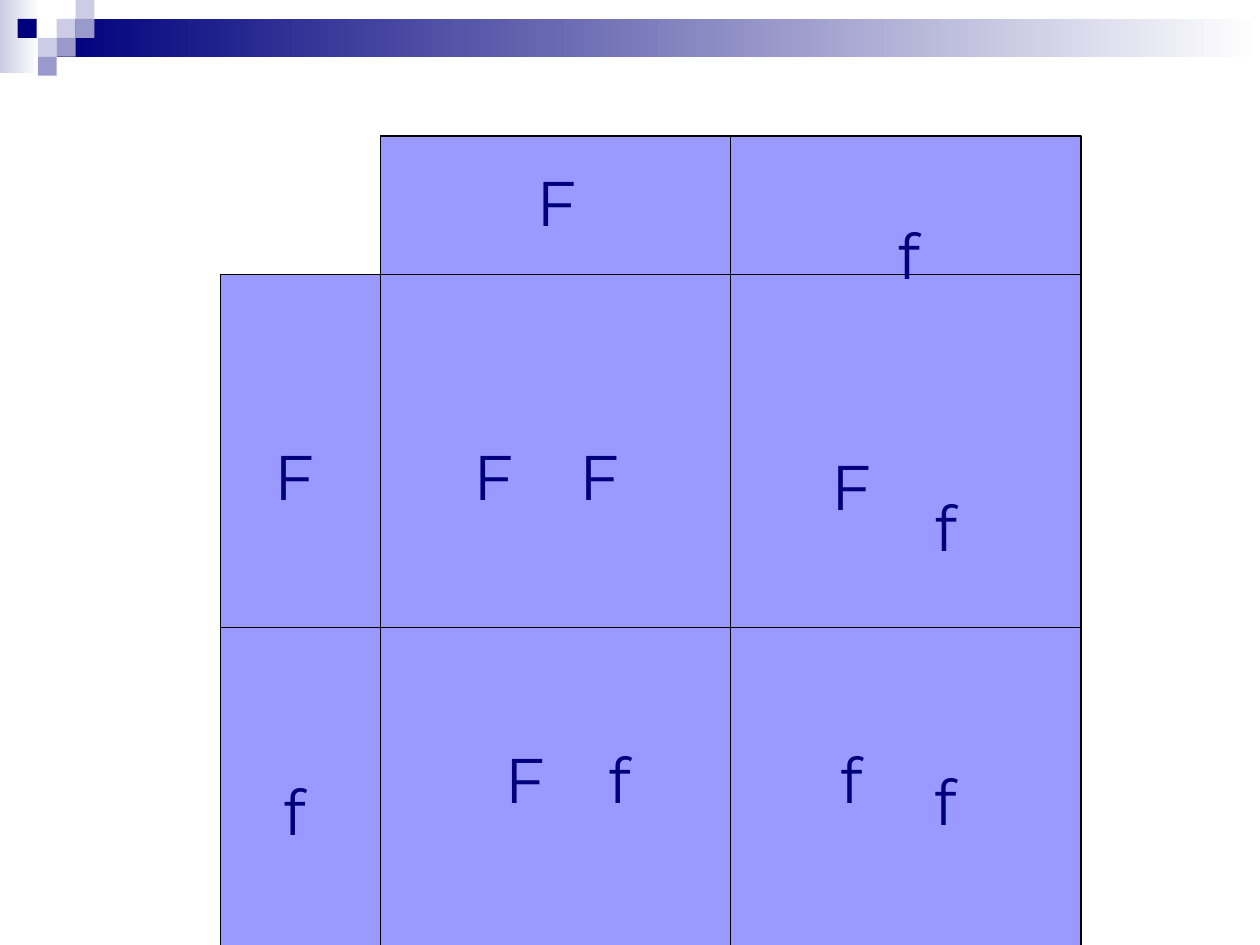
import pptx
import pptx.util
import pptx.dml.color
import pptx.enum.shapes
import pptx.enum.text

Inches = pptx.util.Inches
deck = pptx.Presentation()
deck.slide_width = Inches(10)
deck.slide_height = Inches(7.5)
slide = deck.slides.add_slide(deck.slide_layouts[6])


def rgb(code):
    return pptx.dml.color.RGBColor.from_string(code)


def box(left, top, width, height, fill=None, edge=None):
    shape = slide.shapes.add_shape(
        pptx.enum.shapes.MSO_SHAPE.RECTANGLE,
        Inches(left), Inches(top), Inches(width), Inches(height))
    shape.shadow.inherit = False
    if fill:
        shape.fill.solid()
        shape.fill.fore_color.rgb = rgb(fill)
    else:
        shape.fill.background()
    if edge:
        shape.line.color.rgb = rgb(edge)
        shape.line.width = pptx.util.Pt(0.75)
    else:
        shape.line.fill.background()
    return shape


navy, pale, mid, blue, black = "00007D", "CCCCE6", "9999CC", "9999FF", "000000"

for left, top, width, height, start in [
    (0, 0, 0.31, 0.58, pale),
    (0.45, 0.15, 9.55, 0.3, navy),
]:
    band = box(left, top, width, height)
    band.fill.gradient()
    band.fill.gradient_angle = 0
    for stop, spot, tone in zip(band.fill.gradient_stops, (0, 1), (start, "FFFFFF")):
        stop.position = spot
        stop.color.rgb = rgb(tone)

unit = 0.15
for left, row, tone in [
    (0.45, 1, pale), (0.6, 0, pale), (0.6, 1, mid), (0.3, 2, pale),
    (0.14, 1, navy), (0.45, 2, mid), (0.3, 3, mid),
]:
    box(left, row * unit, unit, unit, tone)

side, first, last, right = 1.75, 3.02, 5.8, 8.58
head, upper, lower, base = 1.08, 2.18, 4.98, 7.56
span = right - side
box(side, upper, span, base - upper, blue, black)
for left in (last, first):
    box(left, head, right - last, base - head, blue, black)
for top in (upper, lower):
    box(side, top, span, base - top, edge=black)

for gene, left, top, width in [
    ("F", 2, 3.42, 0.67), ("f", 2, 6.08, 0.67),
    ("F", 4.08, 1.25, 0.67), ("f", 7, 1.67, 0.42),
    ("F", 3.58, 3.42, 0.67), ("F", 4.42, 3.42, 0.67),
    ("F", 6.42, 3.5, 0.67), ("f", 7.17, 3.83, 0.67),
    ("f", 4.58, 5.83, 0.67), ("F", 3.83, 5.83, 0.67),
    ("f", 6.42, 5.83, 0.67), ("f", 7.25, 6, 0.5),
]:
    label = slide.shapes.add_textbox(
        Inches(left), Inches(top), Inches(width), Inches(0.71))
    label.text_frame.word_wrap = False
    para = label.text_frame.paragraphs[0]
    para.alignment = pptx.enum.text.PP_ALIGN.CENTER
    run = para.add_run()
    run.text = gene
    run.font.size = pptx.util.Pt(36)
    run.font.name = "Montserrat"
    run.font.color.rgb = rgb(navy)

deck.save("out.pptx")
